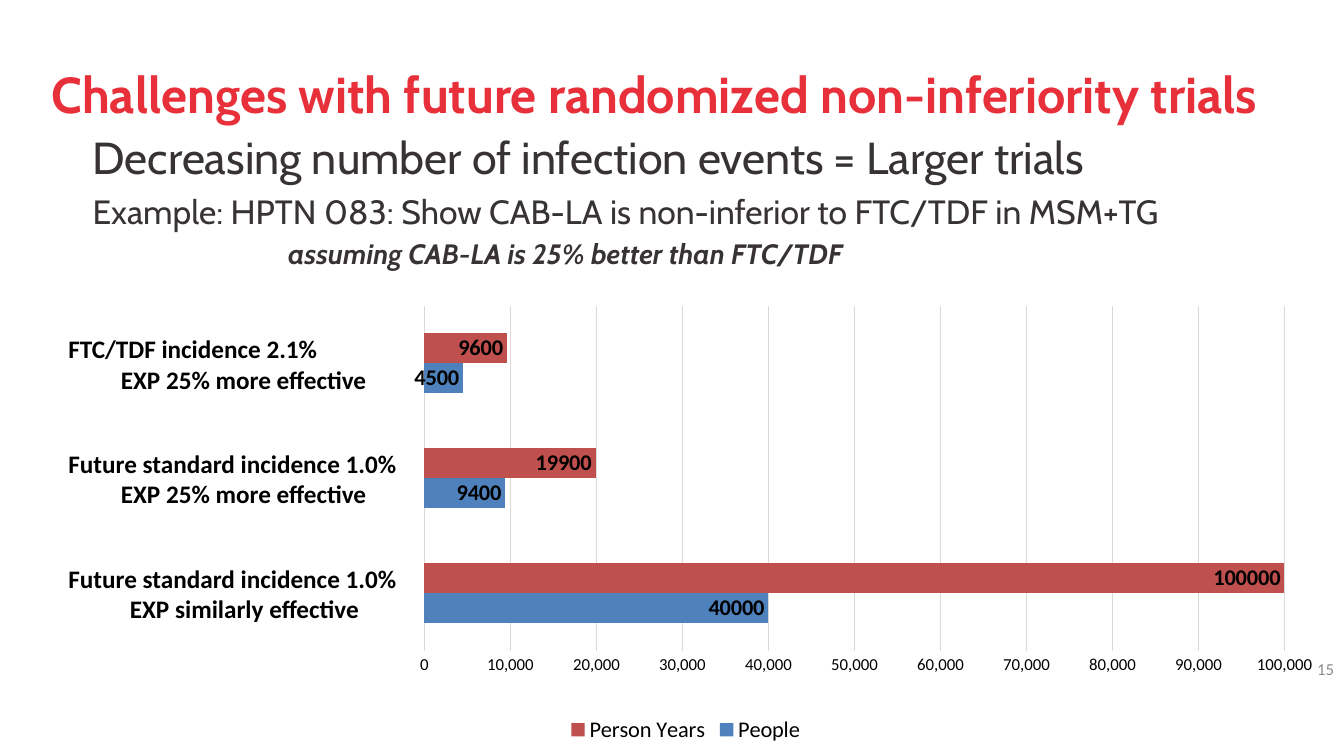
"""Build a slide on how falling incidence enlarges non-inferiority trials."""
from lxml import etree
from pptx import Presentation
from pptx.chart.data import CategoryChartData
from pptx.dml.color import RGBColor
from pptx.enum import chart as c, text as t
from pptx.oxml import parse_xml
from pptx.oxml.ns import nsdecls
from pptx.util import Inches, Pt

RED = RGBColor(0xE8, 0x30, 0x3B)
CHARCOAL = RGBColor(0x38, 0x33, 0x33)
GRAY = RGBColor(0x8C, 0x8C, 0x8C)
GRID = RGBColor(0xD9, 0xD9, 0xD9)
BLACK = RGBColor(0, 0, 0)
BLUE = RGBColor(0x4F, 0x81, 0xBD)
BRICK = RGBColor(0xC0, 0x50, 0x4D)


def style(font, size, color, name="Calibri", bold=False, italic=False):
    font.size, font.name = Pt(size), name
    font.bold, font.italic = bold, italic
    font.color.rgb = color


def add_text_frame(slide, left, top, width, height, anchor):
    box = slide.shapes.add_textbox(Inches(left), Inches(top), Inches(width), Inches(height))
    box.text_frame.word_wrap = True
    box.text_frame.vertical_anchor = anchor
    return box.text_frame


presentation = Presentation()
presentation.slide_width, presentation.slide_height = Inches(13.33), Inches(7.5)
slide = presentation.slides.add_slide(presentation.slide_layouts[6])

title = add_text_frame(slide, 0.24, 0.3, 12.5, 1.25, t.MSO_ANCHOR.MIDDLE).paragraphs[0]
title.alignment = t.PP_ALIGN.CENTER
run = title.add_run()
run.text = "Challenges with future randomized non-inferiority trials"
style(run.font, 36, RED, "Cabin", bold=True)

body = add_text_frame(slide, 0.82, 1.24, 11.69, 1.6, t.MSO_ANCHOR.TOP)
body_lines = [
    ("Decreasing number of infection events = Larger trials", 32, False),
    ("Example: HPTN 083: Show CAB-LA is non-inferior to FTC/TDF in MSM+TG", 24, False),
    ("assuming CAB-LA is 25% better than FTC/TDF", 20, True),
]
for index, (line, size, is_assumption) in enumerate(body_lines):
    paragraph = body.add_paragraph() if index else body.paragraphs[0]
    if index:
        paragraph.space_before = Pt(size * 0.2)
    if is_assumption:
        paragraph.level = 1
        paragraph._p.get_or_add_pPr().set("marL", str(Inches(1.94)))
    run = paragraph.add_run()
    run.text = line
    style(run.font, size, CHARCOAL, "Cabin", bold=is_assumption, italic=is_assumption)

number = add_text_frame(slide, 10.22, 6.44, 3.11, 0.4, t.MSO_ANCHOR.MIDDLE).paragraphs[0]
number.alignment = t.PP_ALIGN.RIGHT
run = number.add_run()
run.text = "15"
style(run.font, 12, GRAY)

scenarios = [
    ("Future standard incidence 1.0%", "EXP similarly effective", 0.61),
    ("Future standard incidence 1.0%", "EXP 25% more effective", 0.52),
    ("FTC/TDF incidence 2.1%", "EXP 25% more effective", 0.52),
]
trial_sizes = CategoryChartData()
trial_sizes.categories = [f"{standard} {effect}" for standard, effect, indent in scenarios]
trial_sizes.add_series("People", (40000, 9400, 4500))
trial_sizes.add_series("Person Years", (100000, 19900, 9600))
chart = slide.shapes.add_chart(
    c.XL_CHART_TYPE.BAR_CLUSTERED, Inches(0.4), Inches(3.03), Inches(12.8), Inches(4.39), trial_sizes
).chart
chart.has_title = False
style(chart.font, 10, BLACK)

chart.has_legend = True
chart.legend.position = c.XL_LEGEND_POSITION.BOTTOM
chart.legend.include_in_layout = False
style(chart.legend.font, 16, BLACK)

plot = chart.plots[0]
plot.gap_width, plot.overlap = 182, 0
plot.vary_by_categories = False
for series, color in zip(plot.series, (BLUE, BRICK)):
    series.format.fill.solid()
    series.format.fill.fore_color.rgb = color
    labels = series.data_labels
    labels.show_value = True
    labels.position = c.XL_LABEL_POSITION.INSIDE_END
    style(labels.font, 16, BLACK, bold=True)

category_axis, value_axis = chart.category_axis, chart.value_axis
for axis in (category_axis, value_axis):
    axis.major_tick_mark = axis.minor_tick_mark = c.XL_TICK_MARK.NONE
category_axis.tick_label_position = c.XL_TICK_LABEL_POSITION.NONE
style(category_axis.tick_labels.font, 18, BLACK, bold=True)
style(value_axis.tick_labels.font, 12, BLACK)

value_axis.minimum_scale, value_axis.maximum_scale = 0, 100000
value_axis.major_unit = 10000
value_axis.tick_labels.number_format = "#,##0"
value_axis.tick_labels.number_format_is_linked = False
value_axis.format.line.fill.background()
value_axis.has_major_gridlines = True
for line_format in (category_axis.format.line, value_axis.major_gridlines.format.line):
    line_format.color.rgb = GRID
    line_format.width = Pt(0.75)

plot_area = chart._chartSpace.chart.plotArea
for layout in plot_area.findall("{*}layout"):
    plot_area.remove(layout)
layout = parse_xml(f"<c:layout {nsdecls('c')}><c:manualLayout/></c:layout>")
namespace = etree.QName(layout).namespace
settings = [("layoutTarget", "inner"), ("xMode", "edge"), ("yMode", "edge"),
            ("x", 3.81 / 12.8), ("y", 0), ("w", 8.53 / 12.8), ("h", 0.78)]
for tag, value in settings:
    etree.SubElement(layout[0], f"{{{namespace}}}{tag}").set("val", str(value))
plot_area.insert(0, layout)

for row, (standard, effect, indent) in enumerate(reversed(scenarios)):
    label = add_text_frame(slide, 0.58, 3.26 + 1.14 * row, 3.6, 0.7, t.MSO_ANCHOR.MIDDLE)
    for paragraph, line in ((label.paragraphs[0], standard), (label.add_paragraph(), effect)):
        if line == effect:
            paragraph._p.get_or_add_pPr().set("marL", str(Inches(indent)))
        run = paragraph.add_run()
        run.text = line
        style(run.font, 18, BLACK, bold=True)

presentation.save("out.pptx")
